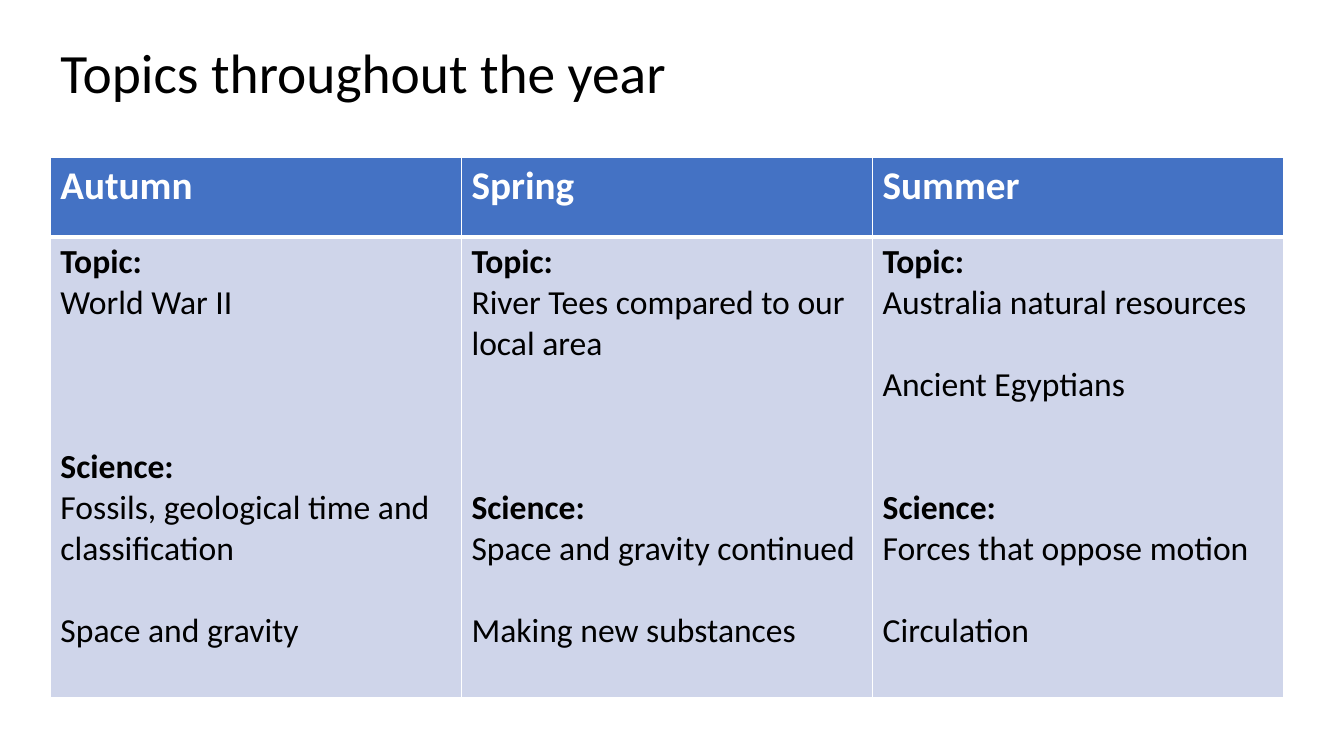
"""Build the slide of school topics for each term of the year."""
from lxml import etree
from pptx import Presentation
from pptx.dml.color import RGBColor
from pptx.enum import text as t
from pptx.oxml import ns
from pptx.util import Cm, Pt

TITLE = "Topics throughout the year"
TERMS = ["Autumn", "Spring", "Summer"]
# Each line: wording, bold, empty lines of space above it
ENTRIES = [
    [("Topic:", True, 0), ("World War II", False, 0),
     ("Science:", True, 3), ("Fossils, geological time and classification", False, 0),
     ("Space and gravity", False, 1)],
    [("Topic:", True, 0), ("River Tees compared to our local area", False, 0),
     ("Science:", True, 3), ("Space and gravity continued", False, 0),
     ("Making new substances", False, 1)],
    [("Topic:", True, 0), ("Australia natural resources", False, 0),
     ("Ancient Egyptians", False, 1),
     ("Science:", True, 2), ("Forces that oppose motion", False, 0),
     ("Circulation", False, 1)],
]
FONT = "Calibri"
BLACK, WHITE, BLUE, PALE = "000000", "FFFFFF", "4472C4", "CFD5EA"
LEFT, TABLE_TOP, COLUMN_WIDTH = Cm(1.27), Cm(3.96), Cm(10.36)
HEADER_HEIGHT, BODY_HEIGHT = Cm(2.01), Cm(11.6)
LINE_PITCH = 29.3


def color(value):
    return RGBColor.from_string(value)


def add_run(paragraph, wording, size, value, bold=False):
    run = paragraph.add_run()
    run.text = wording
    run.font.name, run.font.size, run.font.bold = FONT, Pt(size), bold
    run.font.color.rgb = color(value)


def style_cell(cell, fill, top, bottom):
    properties = cell._tc.get_or_add_tcPr()
    for side, width in (("L", 1), ("R", 1), ("T", top), ("B", bottom)):
        line = etree.SubElement(properties, ns.qn(f"a:ln{side}"), w=str(Pt(width)))
        solid = etree.SubElement(line, ns.qn("a:solidFill"))
        etree.SubElement(solid, ns.qn("a:srgbClr"), val=WHITE)
    cell.fill.solid()
    cell.fill.fore_color.rgb = color(fill)


def write_lines(cell, lines, size, value):
    frame = cell.text_frame
    for index, (wording, bold, gap) in enumerate(lines):
        paragraph = frame.add_paragraph() if index else frame.paragraphs[0]
        if gap:
            paragraph.space_before = Pt(gap * LINE_PITCH)
        add_run(paragraph, wording, size, value, bold)


def add_title(slide):
    title = slide.shapes.title
    title.left, title.top, title.width, title.height = LEFT, Cm(1.07), Cm(17.7), Cm(1.68)
    frame = title.text_frame
    frame.auto_size = t.MSO_AUTO_SIZE.NONE
    frame.vertical_anchor = t.MSO_ANCHOR.MIDDLE
    paragraph = frame.paragraphs[0]
    paragraph.alignment = t.PP_ALIGN.LEFT
    paragraph.line_spacing = 0.9
    add_run(paragraph, TITLE, 39.6, BLACK)


def add_terms(slide):
    table = slide.shapes.add_table(2, len(TERMS), LEFT, TABLE_TOP, COLUMN_WIDTH * len(TERMS),
                                   HEADER_HEIGHT + BODY_HEIGHT).table
    table.rows[0].height, table.rows[1].height = HEADER_HEIGHT, BODY_HEIGHT
    for index, (term, lines) in enumerate(zip(TERMS, ENTRIES)):
        table.columns[index].width = COLUMN_WIDTH
        header, body = table.cell(0, index), table.cell(1, index)
        style_cell(header, BLUE, 1, 3)
        write_lines(header, [(term, True, 0)], 28, WHITE)
        style_cell(body, PALE, 3, 1)
        write_lines(body, lines, 24, BLACK)


def main():
    presentation = Presentation()
    presentation.slide_width, presentation.slide_height = Cm(33.87), Cm(19.05)
    slide = presentation.slides.add_slide(presentation.slide_layouts[5])
    add_title(slide)
    add_terms(slide)
    presentation.save("out.pptx")


if __name__ == "__main__":
    main()
